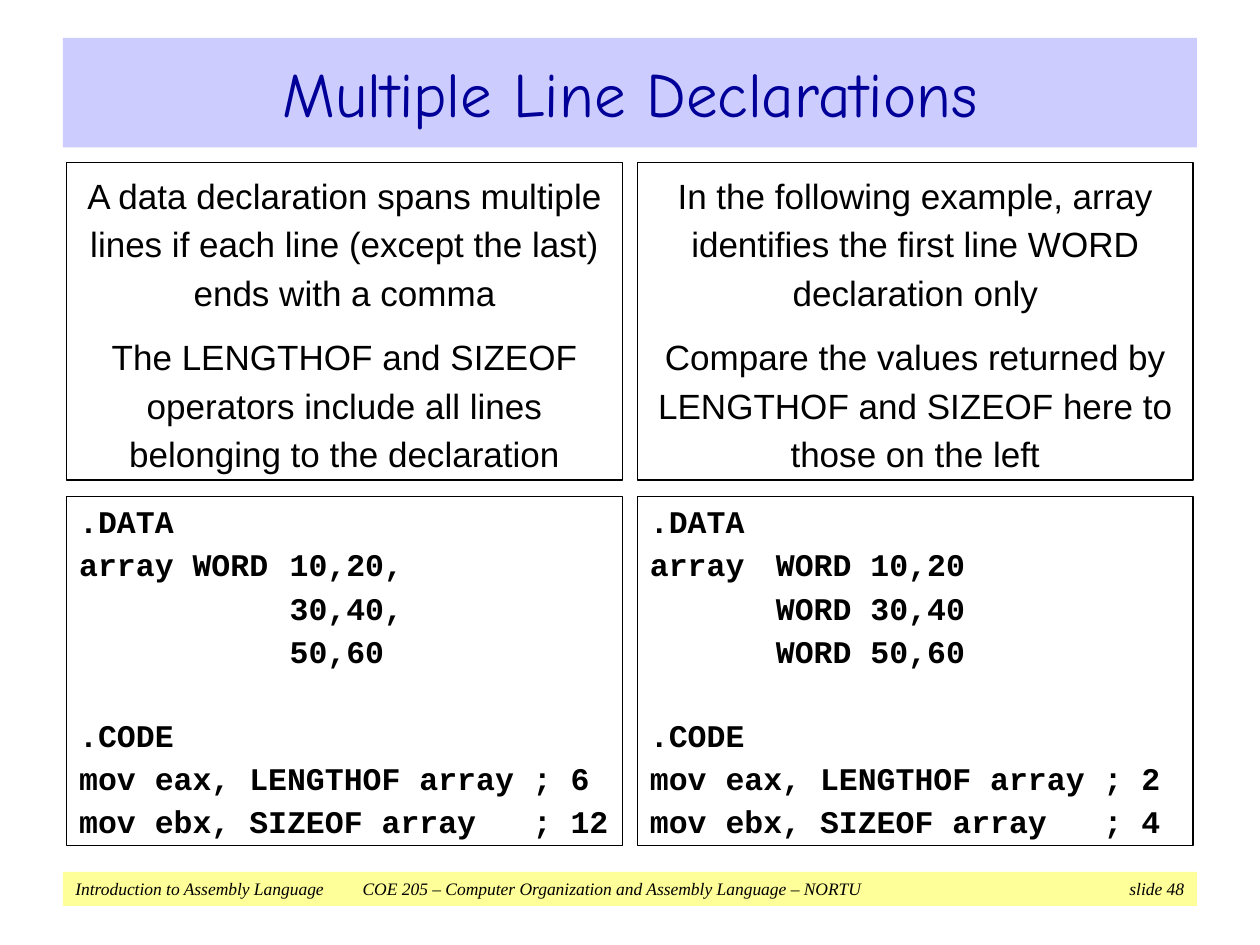
from lxml import etree
from pptx import Presentation
from pptx.dml.color import RGBColor
from pptx.enum.shapes import MSO_SHAPE
from pptx.enum.text import MSO_ANCHOR, PP_ALIGN
from pptx.oxml.ns import qn
from pptx.util import Inches, Pt

RECTANGLE = MSO_SHAPE.RECTANGLE
MIDDLE = MSO_ANCHOR.MIDDLE
LEFT, CENTER = PP_ALIGN.LEFT, PP_ALIGN.CENTER

BLACK = RGBColor(0x00, 0x00, 0x00)
NAVY = RGBColor(0x00, 0x00, 0x99)
LAVENDER = RGBColor(0xCC, 0xCC, 0xFF)
YELLOW = RGBColor(0xFF, 0xFF, 0x99)

WIDTH, HEIGHT = 10, 7.5
BAND_LEFT, BAND_WIDTH = 0.5, 9
GRID_LEFT, COLUMN_WIDTH, COLUMN_GAP = 0.53, 4.41, 0.12
GRID_TOP, ROW_HEIGHTS, ROW_GAP = 1.29, (2.52, 2.77), 0.13
COMMENT_TAB = 3.6
CODE_GAP, SECTION_GAP = 3, 26.4

EXPLANATIONS = (
    (
        "A data declaration spans multiple lines if each line (except the last) ends with a comma",
        "The LENGTHOF and SIZEOF operators include all lines belonging to the declaration",
    ),
    (
        "In the following example, array identifies the first line WORD declaration only",
        "Compare the values returned by LENGTHOF and SIZEOF here to those on the left",
    ),
)
LISTINGS = (
    (1.67, ("array WORD\t10,20,", "\t30,40,", "\t50,60"), (6, 12)),
    (1, ("array\tWORD 10,20", "\tWORD 30,40", "\tWORD 50,60"), (2, 4)),
)


class DeclarationSlide:
    def __init__(self, slide):
        self.slide = slide

    def box(self, left, top, width, height, fill=None, outline=None):
        shape = self.slide.shapes.add_shape(
            RECTANGLE, Inches(left), Inches(top), Inches(width), Inches(height)
        )
        shape.shadow.inherit = False
        if fill is None:
            shape.fill.background()
        else:
            shape.fill.solid()
            shape.fill.fore_color.rgb = fill
        if outline is None:
            shape.line.fill.background()
        else:
            shape.line.color.rgb = outline
            shape.line.width = Pt(0.75)
        frame = shape.text_frame
        frame.word_wrap = True
        frame.vertical_anchor = MIDDLE
        frame.margin_left = frame.margin_right = Inches(0.1)
        frame.margin_top = frame.margin_bottom = 0
        return frame

    def add_lines(self, frame, lines, face, size, color=BLACK, align=LEFT, bold=False,
                  italic=False, gaps=None, spacing=1, tabs=()):
        for index, line in enumerate(lines):
            paragraph = frame.paragraphs[0] if index == 0 else frame.add_paragraph()
            paragraph.text = line
            paragraph.alignment = align
            if tabs:
                self.set_tabs(paragraph, tabs)
            paragraph.line_spacing = spacing
            paragraph.space_before = Pt(gaps[index] if gaps else 0)
            font = paragraph.font
            font.name, font.size = face, Pt(size)
            font.bold, font.italic = bold, italic
            font.color.rgb = color

    def set_tabs(self, paragraph, tabs):
        properties = paragraph._p.get_or_add_pPr()
        stops = etree.SubElement(properties, qn("a:tabLst"))
        for position, kind in tabs:
            etree.SubElement(stops, qn("a:tab"), pos=str(Inches(position)), algn=kind)

    def panel(self, column, row):
        left = GRID_LEFT + column * (COLUMN_WIDTH + COLUMN_GAP)
        top = GRID_TOP + sum(ROW_HEIGHTS[:row]) + row * ROW_GAP
        return self.box(left, top, COLUMN_WIDTH, ROW_HEIGHTS[row], outline=BLACK)

    def title(self, text):
        frame = self.box(BAND_LEFT, 0.3, BAND_WIDTH, 0.87, fill=LAVENDER)
        self.add_lines(frame, [text], "Comic Neue", 36, NAVY, CENTER)

    def footer(self, chapter, course, number):
        frame = self.box(BAND_LEFT, 6.92, BAND_WIDTH, 0.27, fill=YELLOW)
        self.add_lines(frame, [f"{chapter}\t{course}\t{number}"], "Times New Roman", 10,
                       italic=True, tabs=((2.28, "l"), (8.8, "r")))

    def explanation(self, column, statements):
        self.add_lines(self.panel(column, 0), statements, "Arial", 20, align=CENTER,
                       gaps=[9.5] * len(statements), spacing=1.15)

    def listing(self, column, data_tab, data, results):
        length, size = results
        lines = [
            ".DATA",
            *data,
            ".CODE",
            f"mov eax, LENGTHOF array ; {length}",
            f"mov ebx, SIZEOF array\t; {size}",
        ]
        gaps = [SECTION_GAP if line == ".CODE" else CODE_GAP for line in lines]
        self.add_lines(self.panel(column, 1), lines, "Courier New", 18, bold=True, gaps=gaps,
                       tabs=((data_tab, "l"), (COMMENT_TAB, "l")))


def main():
    deck = Presentation()
    deck.slide_width, deck.slide_height = Inches(WIDTH), Inches(HEIGHT)
    page = DeclarationSlide(deck.slides.add_slide(deck.slide_layouts[6]))
    page.footer("Introduction to Assembly Language",
                "COE 205 – Computer Organization and Assembly Language – NORTU",
                "slide 48")
    page.title("Multiple Line Declarations")
    for column, (statements, listing) in enumerate(zip(EXPLANATIONS, LISTINGS)):
        page.explanation(column, statements)
        page.listing(column, *listing)
    deck.save("out.pptx")


if __name__ == "__main__":
    main()
